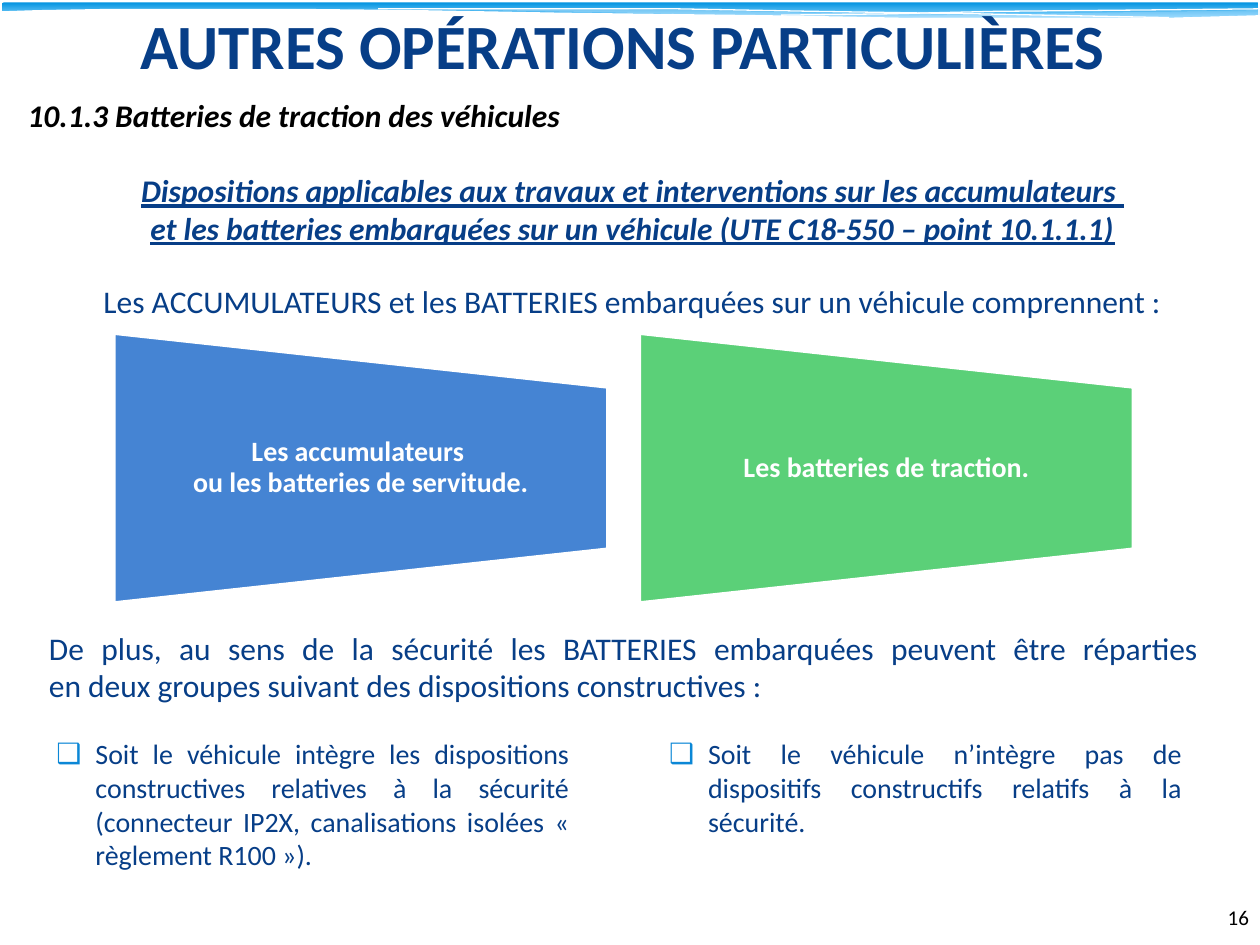
from lxml import etree
from pptx import Presentation
from pptx import util as u
from pptx.dml.color import RGBColor
from pptx.enum import shapes, text
from pptx.oxml import ns

# The grid has 100 columns and 75 rows of equal size.
UNIT = u.Inches(0.1)
COLS, ROWS = 100, 75
FINE = 100  # steps per grid unit for the outlines

NAVY = RGBColor(0x07, 0x3E, 0x87)
BLACK = RGBColor(0, 0, 0)
WHITE = RGBColor(0xFF, 0xFF, 0xFF)
SKY = RGBColor(0x02, 0x93, 0xE0)
PALE = RGBColor(0x83, 0xD3, 0xFE)
MIST = RGBColor(0xC6, 0xE7, 0xFC)
BLUE = RGBColor(0x45, 0x84, 0xD3)
GREEN = RGBColor(0x5B, 0xD0, 0x78)
BULLET = "0B87D6"

ALIGN = text.PP_ALIGN
BASE = {"name": "Calibri", "size": u.Pt(18), "bold": False}
STRONG = {**BASE, "bold": True, "italic": True}

# Each band: points, fill, opacity in percent, closed or not.
BANDS = [
    ([(100, 0.8), (94.2, 0.9), (87.9, 1), (76.6, 1.2), (67, 1.3), (74.4, 1.4),
      (90.9, 1.4), (96.5, 1.3), (100, 1.2)], MIST, 29, True),
    ([(91.3, 1.4), (78.9, 1.2), (63.6, 1), (55.8, 0.8), (46.3, 0.7), (27.6, 0.7),
      (37.8, 0.8), (49.1, 1), (62.4, 1.3), (73.4, 1.4)], MIST, 40, True),
    ([(30, 0.7), (53.5, 0.7), (64.3, 0.9), (77.4, 1.1), (92.8, 1.4)], None, 100, False),
    ([(62, 1.2), (70.5, 1.1), (79.1, 0.9), (90, 0.8), (100, 0.7)], None, 100, False),
    ([(100, 1.2), (92.9, 1.4), (71.8, 1.4), (60.8, 1.2), (44.4, 1), (33.2, 0.8),
      (23.8, 0.7), (8.7, 0.7), (3, 0.8), (0, 0.9), (0, 1.9), (100, 1.9)], WHITE, 100, True),
]


def grid(*cells):
    return [round(cell * UNIT) for cell in cells]


def format(thing, values):
    for key, value in values.items():
        setattr(thing, key, value)


def style(par, words, font, color, **rules):
    par.text = words
    format(par, rules)
    for run in par.runs:
        format(run.font, font)
        run.font.color.rgb = color


def add_text(slide, cells, items, **frame):
    """Add a text box; items hold words, font, colour and paragraph rules."""
    body = slide.shapes.add_textbox(*grid(*cells)).text_frame
    format(body, {"word_wrap": True, **frame})
    for i, (words, font, color, rules) in enumerate(items):
        par = body.add_paragraph() if i else body.paragraphs[0]
        style(par, words, font, color, **rules)
    return body


def add_title(slide, words):
    """Fill the title and bring it in front of the header."""
    title = slide.shapes.title
    slide.shapes._spTree.append(title._element)
    format(title, dict(zip(("left", "top", "width", "height"), grid(0, 0, COLS, 7.1))))
    title.text_frame.vertical_anchor = text.MSO_ANCHOR.MIDDLE
    font = {**BASE, "size": u.Pt(36), "bold": True}
    style(title.text_frame.paragraphs[0], words, font, NAVY, alignment=ALIGN.CENTER)


def add_band(slide, points, color, alpha, closed):
    dots = [(round(x * FINE), round(y * FINE)) for x, y in points]
    pen = slide.shapes.build_freeform(*dots[0], scale=UNIT / FINE)
    pen.add_line_segments(dots[1:], close=closed)
    band = pen.convert_to_shape()
    band.shadow.inherit = False
    if color is None:
        band.fill.background()
        band.line.color.rgb = WHITE
        band.line.width = 0
        return
    band.line.fill.background()
    band.fill.solid()
    band.fill.fore_color.rgb = color
    if alpha < 100:
        tint = band.fill._xPr.find(".//" + ns.qn("a:srgbClr"))
        etree.SubElement(tint, ns.qn("a:alpha"), val=str(alpha * 1000))


def add_header(slide):
    bar = slide.shapes.add_shape(
        shapes.MSO_SHAPE.ROUNDED_RECTANGLE, *grid(0.2, 0.2, 99.7, 1.3))
    bar.adjustments[0] = 0.07
    bar.shadow.inherit = False
    bar.line.fill.background()
    bar.fill.gradient()
    bar.fill.gradient_angle = 270
    for stop, color, place in zip(bar.fill.gradient_stops, (SKY, PALE), (0, 0.9)):
        stop.color.rgb = color
        stop.position = place
    for band in BANDS:
        add_band(slide, *band)


def add_panel(slide, left, color, words):
    """Add a trapezoid turned on its side, with upright words over it."""
    top, wide, high = 26.5, 39.1, 21.3
    shift = (wide - high) / 2
    panel = slide.shapes.add_shape(
        shapes.MSO_SHAPE.FLOWCHART_MANUAL_OPERATION,
        *grid(left + shift, top - shift, high, wide))
    panel.rotation = 270
    panel.shadow.inherit = False
    panel.fill.solid()
    panel.fill.fore_color.rgb = color
    panel.line.color.rgb = WHITE
    panel.line.width = u.Pt(1.25)
    font = {**BASE, "size": u.Pt(16), "bold": True}
    rules = {"alignment": ALIGN.CENTER, "line_spacing": 0.9}
    add_text(slide, (left, top + high / 5, wide, high * 3 / 5),
             [(words, font, WHITE, rules)],
             vertical_anchor=text.MSO_ANCHOR.MIDDLE, margin_top=0, margin_bottom=0)


def add_list(slide, cells, items):
    """Add a bulleted list in two columns."""
    font = {**BASE, "size": u.Pt(16)}
    rules = {"alignment": ALIGN.JUSTIFY, "space_after": u.Pt(6)}
    body = add_text(slide, cells, [(item, font, NAVY, rules) for item in items])
    frame = body._txBody.bodyPr
    frame.set("numCol", "2")
    frame.set("spcCol", str(u.Inches(0.79)))
    dent = u.Inches(0.31)
    for par in body.paragraphs:
        props = par._p.get_or_add_pPr()
        props.set("marL", str(dent))
        props.set("indent", str(-dent))
        tint = etree.SubElement(props, ns.qn("a:buClr"))
        etree.SubElement(tint, ns.qn("a:srgbClr"), val=BULLET)
        etree.SubElement(props, ns.qn("a:buFont"), typeface=BASE["name"])
        etree.SubElement(props, ns.qn("a:buChar"), char="❑")


def main():
    deck = Presentation()
    deck.slide_width, deck.slide_height = grid(COLS, ROWS)
    slide = deck.slides.add_slide(deck.slide_layouts[5])
    add_header(slide)
    add_title(slide, "AUTRES OPÉRATIONS PARTICULIÈRES ")
    add_text(slide, (94.9, 71.3, 5.2, 4),
             [("16", {**BASE, "size": u.Pt(12)}, BLACK, {"alignment": ALIGN.RIGHT})])
    add_text(slide, (1.2, 7.1, 95.1, 4),
             [("10.1.3 Batteries de traction des véhicules", STRONG, BLACK, {})])
    add_text(slide, (2.9, 13.1, 94.6, 13), [
        ("Dispositions applicables aux travaux et interventions sur les accumulateurs \v"
         "et les batteries embarquées sur un véhicule (UTE C18-550 – point 10.1.1.1)",
         {**STRONG, "underline": True}, NAVY, {"alignment": ALIGN.CENTER}),
        ("Les ACCUMULATEURS et les BATTERIES embarquées sur un véhicule comprennent :",
         BASE, NAVY, {"alignment": ALIGN.CENTER, "space_before": u.Pt(20)}),
    ])
    add_panel(slide, 9.1, BLUE, "Les accumulateurs \vou les batteries de servitude.")
    add_panel(slide, 50.8, GREEN, "Les batteries de traction.")
    add_text(slide, (2.9, 49.4, 94.6, 7.1), [
        ("De plus, au sens de la sécurité les BATTERIES embarquées peuvent être réparties \v"
         "en deux groupes suivant des dispositions constructives : ",
         BASE, NAVY, {"alignment": ALIGN.JUSTIFY})])
    add_list(slide, (3.5, 58, 91.3, 12.6), [
        "Soit le véhicule intègre les dispositions constructives relatives à la sécurité "
        "(connecteur IP2X, canalisations isolées « règlement R100 »). ",
        "Soit le véhicule n’intègre pas de dispositifs constructifs relatifs à la sécurité.",
    ])
    deck.save("out.pptx")


if __name__ == "__main__":
    main()
